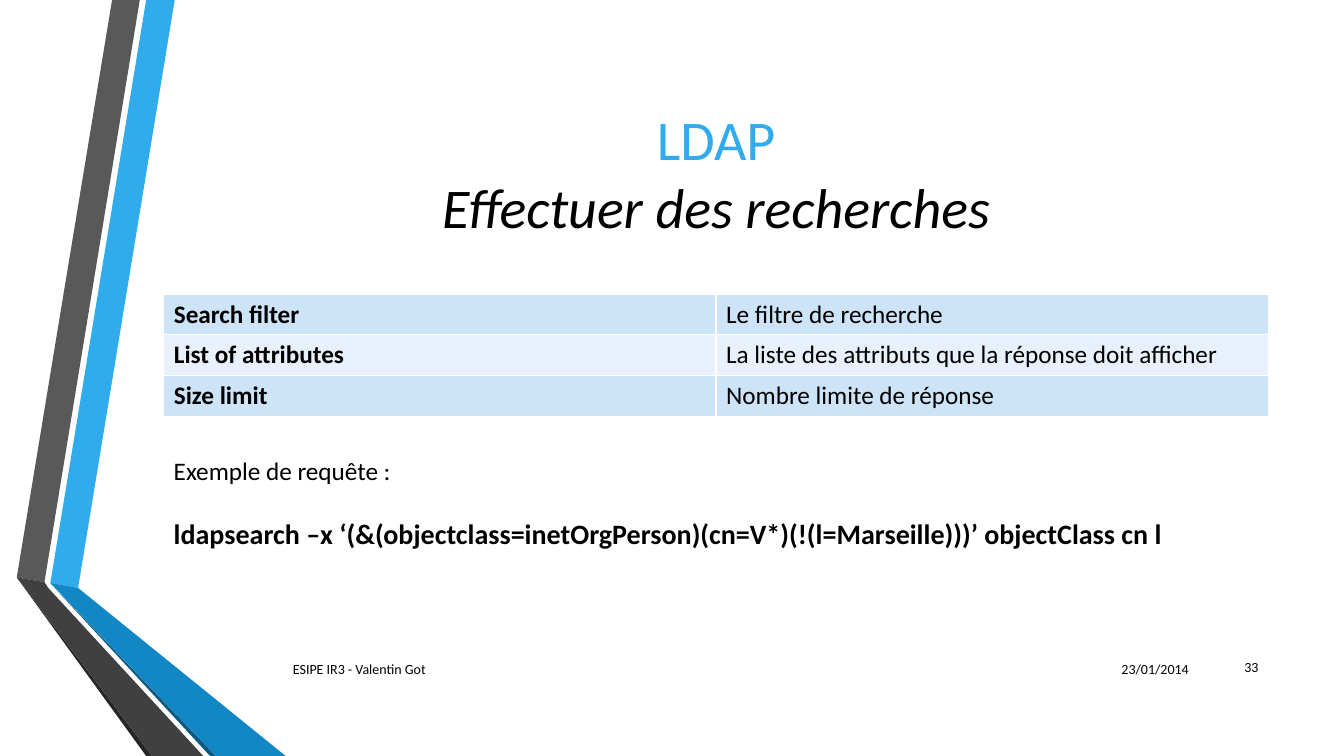
from dataclasses import dataclass

from lxml import etree
from pptx import Presentation
from pptx.dml.color import RGBColor
from pptx.enum.text import MSO_ANCHOR, PP_ALIGN
from pptx.oxml.ns import qn
from pptx.slide import Slide
from pptx.util import Emu, Inches, Pt

WIDTH, HEIGHT = Inches(13.33), Inches(7.5)
COLUMN, ROW = WIDTH / 160, HEIGHT / 90
BOTTOM = 90

LEFT, CENTER, RIGHT = PP_ALIGN.LEFT, PP_ALIGN.CENTER, PP_ALIGN.RIGHT
TOP, MIDDLE = MSO_ANCHOR.TOP, MSO_ANCHOR.MIDDLE

FONT = "Calibri"
BLACK = RGBColor(0x00, 0x00, 0x00)
WHITE = RGBColor(0xFF, 0xFF, 0xFF)
BLUE = RGBColor(0x30, 0xAC, 0xEC)
MID_BLUE = RGBColor(0x12, 0x87, 0xC3)
DARK_BLUE = RGBColor(0x0C, 0x5A, 0x82)
GRAY = RGBColor(0x59, 0x59, 0x59)
DARK_GRAY = RGBColor(0x40, 0x40, 0x40)
CHARCOAL = RGBColor(0x26, 0x26, 0x26)
BANDS = (RGBColor(0xCD, 0xE3, 0xF8), RGBColor(0xE8, 0xF1, 0xFB))


@dataclass(frozen=True)
class Area:
    """A rectangle in grid columns and rows."""
    column: float
    row: float
    columns: float
    rows: float

    def emu(self) -> tuple[Emu, Emu, Emu, Emu]:
        return (Emu(round(self.column * COLUMN)), Emu(round(self.row * ROW)),
                Emu(round(self.columns * COLUMN)), Emu(round(self.rows * ROW)))


@dataclass(frozen=True)
class Ribbon:
    color: RGBColor
    points: tuple[tuple[float, float], ...]


@dataclass(frozen=True)
class Line:
    text: str
    size: float
    color: RGBColor = BLACK
    bold: bool = False
    italic: bool = False
    space_before: float = 0


@dataclass(frozen=True)
class TextBlock:
    area: Area
    lines: tuple[Line, ...]
    align: PP_ALIGN = LEFT
    anchor: MSO_ANCHOR = MIDDLE


RIBBONS = (
    Ribbon(BLUE, ((6, 69.4), (9.3, 70), (20.8, 0), (17.4, 0))),
    Ribbon(GRAY, ((16.65, 0), (13.35, 0), (2, 68.75), (5.3, 69.3))),
    Ribbon(CHARCOAL, ((2, 68.75), (17.4, BOTTOM), (18.1, BOTTOM))),
    Ribbon(DARK_BLUE, ((6, 69.45), (25, BOTTOM), (25.7, BOTTOM))),
    Ribbon(MID_BLUE, ((6, 69.4), (25.7, BOTTOM), (34, BOTTOM), (9.3, 70))),
    Ribbon(DARK_GRAY, ((2, 68.75), (18.1, BOTTOM), (24.2, BOTTOM),
                       (5.75, 70), (5.3, 69.3))),
)

TEXT_BLOCKS = (
    TextBlock(Area(19.5, 9, 131.5, 23), (
        Line("LDAP", 40, BLUE),
        Line("Effectuer des recherches", 40, italic=True)), CENTER),
    TextBlock(Area(127.7, 77.2, 15, 4.8), (Line("23/01/2014", 10),), RIGHT),
    TextBlock(Area(33.7, 77.2, 93, 4.8),
              (Line("ESIPE IR3 - Valentin Got", 10),)),
    TextBlock(Area(143.8, 77, 7.2, 4.8), (Line("33", 10),), RIGHT),
    TextBlock(Area(19.5, 53.6, 131.5, 12.5), (
        Line("Exemple de requête :", 18),
        Line("ldapsearch –x ‘(&(objectclass=inetOrgPerson)(cn=V*)"
             "(!(l=Marseille)))’ objectClass cn l", 20, bold=True,
             space_before=22)), anchor=TOP),
)

TABLE_AREA = Area(19.5, 35, 131.5, 14.6)
PARAMETERS = (
    ("Search filter", "Le filtre de recherche"),
    ("List of attributes",
     "La liste des attributs que la réponse doit afficher"),
    ("Size limit", "Nombre limite de réponse"),
)


def draw_ribbon(page: Slide, ribbon: Ribbon) -> None:
    corners = [(round(x * COLUMN), round(y * ROW)) for x, y in ribbon.points]
    builder = page.shapes.build_freeform(*corners[0])
    builder.add_line_segments(corners[1:], close=True)
    shape = builder.convert_to_shape()
    shape.shadow.inherit = False
    shape.fill.solid()
    shape.fill.fore_color.rgb = ribbon.color
    shape.line.fill.background()


def add_span(para, line: Line) -> None:
    span = para.add_run()
    span.text = line.text
    font = span.font
    font.name, font.size = FONT, Pt(line.size)
    font.bold, font.italic = line.bold, line.italic
    font.color.rgb = line.color


def draw_text(page: Slide, block: TextBlock) -> None:
    frame = page.shapes.add_textbox(*block.area.emu()).text_frame
    frame.word_wrap = True
    frame.vertical_anchor = block.anchor
    for index, line in enumerate(block.lines):
        para = frame.add_paragraph() if index else frame.paragraphs[0]
        para.alignment = block.align
        para.space_before = Pt(line.space_before)
        add_span(para, line)


def add_borders(cell) -> None:
    properties = cell._tc.get_or_add_tcPr()
    for side in ("lnL", "lnR", "lnT", "lnB"):
        border = etree.SubElement(properties, qn(f"a:{side}"), w=str(Pt(1)))
        fill = etree.SubElement(border, qn("a:solidFill"))
        etree.SubElement(fill, qn("a:srgbClr"), val=str(WHITE))


def draw_table(page: Slide) -> None:
    table = page.shapes.add_table(len(PARAMETERS), len(PARAMETERS[0]),
                                  *TABLE_AREA.emu()).table
    table.first_row = table.horz_banding = False
    for row, texts in enumerate(PARAMETERS):
        for column, text in enumerate(texts):
            cell = table.cell(row, column)
            add_borders(cell)
            cell.fill.solid()
            cell.fill.fore_color.rgb = BANDS[row % len(BANDS)]
            add_span(cell.text_frame.paragraphs[0],
                     Line(text, 18, bold=column == 0))


def main() -> None:
    deck = Presentation()
    deck.slide_width, deck.slide_height = WIDTH, HEIGHT
    page = deck.slides.add_slide(deck.slide_layouts[6])
    for ribbon in RIBBONS:
        draw_ribbon(page, ribbon)
    draw_table(page)
    for block in TEXT_BLOCKS:
        draw_text(page, block)
    deck.save("out.pptx")


if __name__ == "__main__":
    main()
